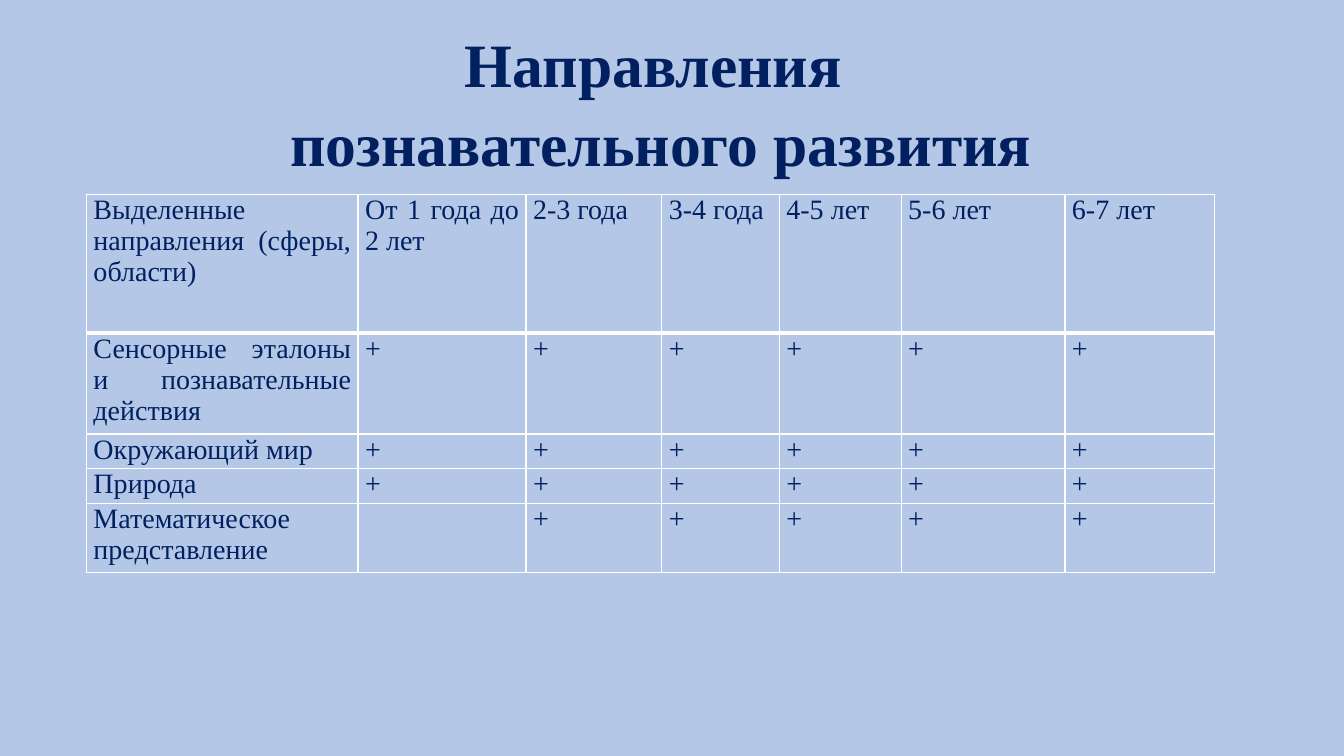
"""Build the slide with the table of cognitive development areas by age."""
import pptx
import pptx.dml.color
import pptx.enum.text
import pptx.oxml
import pptx.oxml.ns
import pptx.util

Pt = pptx.util.Pt
PP_ALIGN = pptx.enum.text.PP_ALIGN
NAVY = pptx.dml.color.RGBColor(0x00, 0x20, 0x60)
WHITE = pptx.dml.color.RGBColor(0xFF, 0xFF, 0xFF)
PALE_BLUE = pptx.dml.color.RGBColor(0xB4, 0xC7, 0xE7)
FONT = "Times New Roman"

TITLE = ["Направления ", "познавательного развития"]
ROWS = [
    ["Выделенные направления (сферы, области)", "От 1 года до 2 лет ",
     "2-3 года", "3-4 года", "4-5 лет", "5-6 лет", "6-7 лет"],
    ["Сенсорные эталоны и познавательные действия"] + ["+"] * 6,
    ["Окружающий мир"] + ["+"] * 6,
    ["Природа"] + ["+"] * 6,
    ["Математическое представление", ""] + ["+"] * 5,
]
COLUMN_WIDTHS = [194, 120, 97, 84, 87, 117, 107]
ROW_HEIGHTS = [99, 72, 24.7, 24.7, 49.6]


def format_paragraph(p, size, bold, align, spacing):
    p.alignment = align
    p.line_spacing = spacing
    p.font.name = FONT
    p.font.size = Pt(size)
    p.font.bold = bold
    p.font.color.rgb = NAVY


def add_border(cell, side, width):
    line = pptx.oxml.parse_xml(
        f'<a:{side} {pptx.oxml.ns.nsdecls("a")} w="{Pt(width)}">'
        f'<a:solidFill><a:srgbClr val="{WHITE}"/></a:solidFill></a:{side}>')
    cell._tc.get_or_add_tcPr().append(line)


prs = pptx.Presentation()
prs.slide_width, prs.slide_height = Pt(960), Pt(540)
s = prs.slides.add_slide(prs.slide_layouts[5])
s.background.fill.solid()
s.background.fill.fore_color.rgb = PALE_BLUE

title = s.shapes.title
title.left, title.top, title.width, title.height = Pt(56), Pt(11.5), Pt(811.5), Pt(114)
tf = title.text_frame
tf.text = "\n".join(TITLE)
tf.word_wrap = True
tf.auto_size = pptx.enum.text.MSO_AUTO_SIZE.NONE
tf.vertical_anchor = pptx.enum.text.MSO_ANCHOR.TOP
for p in tf.paragraphs:
    p._p.get_or_add_pPr().set("marL", str(Pt(21)))
    format_paragraph(p, 44, True, PP_ALIGN.CENTER, 1.07)

table = s.shapes.add_table(len(ROWS), len(COLUMN_WIDTHS), Pt(61.8), Pt(139),
                           Pt(sum(COLUMN_WIDTHS)), Pt(sum(ROW_HEIGHTS))).table
table.first_row = False
table.horz_banding = False
for column, width in zip(table.columns, COLUMN_WIDTHS):
    column.width = Pt(width)
for row, height in zip(table.rows, ROW_HEIGHTS):
    row.height = Pt(height)

for i, texts in enumerate(ROWS):
    for j, text in enumerate(texts):
        cell = table.cell(i, j)
        cell.text = text
        cell.margin_left = cell.margin_right = Pt(5)
        cell.margin_top = cell.margin_bottom = 0
        format_paragraph(cell.text_frame.paragraphs[0], 20, False, PP_ALIGN.JUSTIFY, 1)
        add_border(cell, "lnL", 1)
        add_border(cell, "lnR", 1)
        add_border(cell, "lnT", 3 if i == 1 else 1)
        add_border(cell, "lnB", 3 if i == 0 else 1)
        cell.fill.background()

prs.save("out.pptx")
